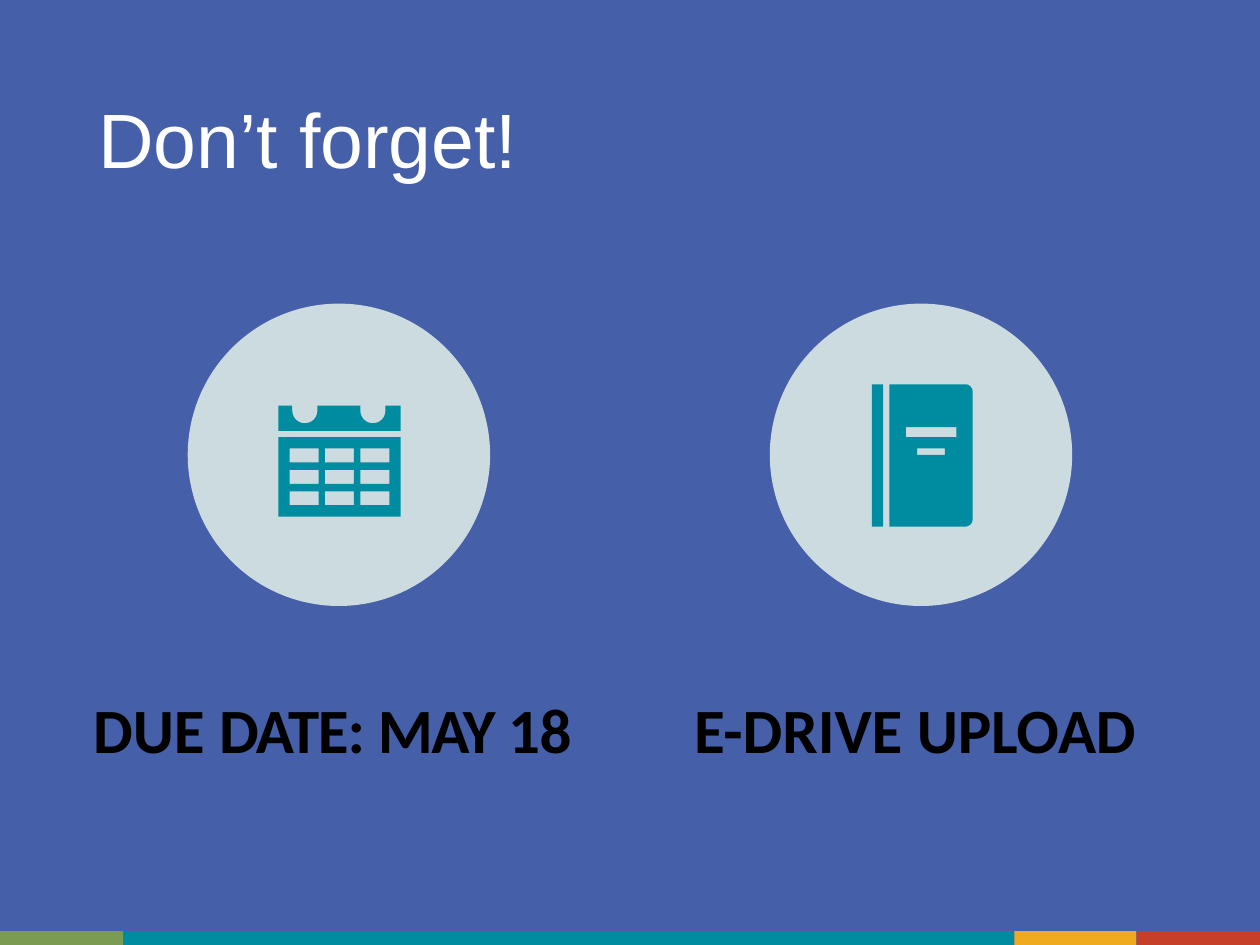
"""Build a reminder slide with a due date and an upload icon."""
from dataclasses import dataclass
from math import cos, pi, sin

from pptx import Presentation
from pptx.dml.color import RGBColor
from pptx.enum.shapes import MSO_SHAPE as Preset
from pptx.enum.text import MSO_ANCHOR as Anchor, MSO_AUTO_SIZE as AutoSize, PP_ALIGN as Align
from pptx.util import Inches, Pt


@dataclass(frozen=True)
class Theme:
    background: str = "455FA9"
    disc: str = "CBDBDF"
    teal: str = "008CA0"
    green: str = "7C9B52"
    amber: str = "EFAA1F"
    red: str = "C63F28"
    title_text: str = "FFFFFF"
    label_text: str = "000000"
    title_font: str = "Arial"
    label_font: str = "Calibri"
    title_size: int = 44
    label_size: int = 36


THEME = Theme()
SLIDE_SIZE = (10, 7.5)

TITLE = [("Don’t ", 0), ("forget!", -0.1)]
TITLE_BOX = (0.77, 0, 8.36, 1.79)
LABELS = [
    ((0.73, 5.46, 3.91, 0.63), [("DUE ", 0), ("DATE: ", -0.7), ("MAY ", -0.9), ("18", -0.3)]),
    ((5.5, 5.46, 3.63, 0.63), [("E-", -0.2), ("DRIVE ", 0), ("UPLOAD", -0.1)]),
]

FOOTER_TOP = 7.39
FOOTER_BANDS = [(0.98, THEME.green), (7.07, THEME.teal), (0.97, THEME.amber), (0.98, THEME.red)]

DISC_LEFTS = (1.49, 6.11)
DISC_TOP = 2.41
DISC_SIZE = 2.4

CALENDAR_PAGE = (2.21, 3.47, 0.97, 0.63)
CALENDAR_HEADER = (2.21, 3.22, 0.97, 0.2)
CALENDAR_COLUMNS = (2.3, 2.58, 2.86)
CALENDAR_ROWS = (3.56, 3.73, 3.9)
DAY_SIZE = (0.23, 0.11)
RING_CENTERS = (2.42, 2.96)
RING_RADIUS = 0.1
RING_DROP = 0.04

BOOK_SPINE = (6.92, 3.05, 0.09, 1.13)
BOOK_COVER = (7.06, 3.05, 0.66, 1.13)
BOOK_CORNER = 0.06
BOOK_LINES = [(7.19, 3.39, 0.4, 0.08), (7.28, 3.56, 0.22, 0.05)]


def paint(shape, color):
    shape.shadow.inherit = False
    shape.fill.solid()
    shape.fill.fore_color.rgb = RGBColor.from_string(color)
    shape.line.fill.background()


def add_preset(slide, preset, box, color):
    paint(slide.shapes.add_shape(preset, *map(Inches, box)), color)


def add_outline(slide, contours, color):
    builder = None
    for contour in contours:
        points = [(Inches(x), Inches(y)) for x, y in contour]
        if builder is None:
            builder = slide.shapes.build_freeform(*points[0])
        else:
            builder.move_to(*points[0])
        builder.add_line_segments(points[1:], close=True)
    paint(builder.convert_to_shape(), color)


def rectangle(left, top, width, height):
    right, bottom = left + width, top + height
    return [(left, top), (right, top), (right, bottom), (left, bottom)]


def arc(center_x, center_y, radius, start, end, steps=12):
    angles = [start + (end - start) * step / steps for step in range(steps + 1)]
    return [(center_x + radius * cos(a), center_y + radius * sin(a)) for a in angles]


def header_contour():
    left, top, width, height = CALENDAR_HEADER
    contour = [(left, top)]
    for center in RING_CENTERS:
        contour.append((center - RING_RADIUS, top))
        contour += arc(center, top + RING_DROP, RING_RADIUS, pi, 0)
        contour.append((center + RING_RADIUS, top))
    return contour + [(left + width, top), (left + width, top + height), (left, top + height)]


def cover_contour():
    left, top, width, height = BOOK_COVER
    center_x = left + width - BOOK_CORNER
    upper = arc(center_x, top + BOOK_CORNER, BOOK_CORNER, -pi / 2, 0)
    lower = arc(center_x, top + height - BOOK_CORNER, BOOK_CORNER, 0, pi / 2)
    return [(left, top), *upper, *lower, (left, top + height)]


def write_text(shape, runs, font_name, size, color, bold, top_inset):
    frame = shape.text_frame
    frame.word_wrap = True
    frame.auto_size = AutoSize.NONE
    frame.vertical_anchor = Anchor.TOP
    frame.margin_left, frame.margin_top = Inches(0.01), Inches(top_inset)
    frame.margin_right = frame.margin_bottom = 0
    paragraph = frame.paragraphs[0]
    paragraph.alignment = Align.LEFT
    for text, spacing in runs:
        run = paragraph.add_run()
        run.text = text
        font = run.font
        font.name, font.size, font.bold = font_name, Pt(size), bold
        font.color.rgb = RGBColor.from_string(color)
        run._r.get_or_add_rPr().set("spc", str(round(spacing * 100)))


def add_title(slide):
    title = slide.shapes.title
    title.left, title.top, title.width, title.height = map(Inches, TITLE_BOX)
    write_text(title, TITLE, THEME.title_font, THEME.title_size, THEME.title_text, False, 0.73)


def add_footer(slide):
    left = 0
    for width, color in FOOTER_BANDS:
        box = (left, FOOTER_TOP, width, SLIDE_SIZE[1] - FOOTER_TOP)
        add_preset(slide, Preset.RECTANGLE, box, color)
        left += width


def add_icons(slide):
    for left in DISC_LEFTS:
        add_preset(slide, Preset.OVAL, (left, DISC_TOP, DISC_SIZE, DISC_SIZE), THEME.disc)
    days = [rectangle(x, y, *DAY_SIZE) for y in CALENDAR_ROWS for x in CALENDAR_COLUMNS]
    add_outline(slide, [rectangle(*CALENDAR_PAGE), *days], THEME.teal)
    add_outline(slide, [header_contour()], THEME.teal)
    lines = [rectangle(*line) for line in BOOK_LINES]
    add_outline(slide, [rectangle(*BOOK_SPINE), cover_contour(), *lines], THEME.teal)


def add_labels(slide):
    for box, runs in LABELS:
        label = slide.shapes.add_textbox(*map(Inches, box))
        write_text(label, runs, THEME.label_font, THEME.label_size, THEME.label_text, True, 0.02)


def main():
    presentation = Presentation()
    presentation.slide_width, presentation.slide_height = map(Inches, SLIDE_SIZE)
    slide = presentation.slides.add_slide(presentation.slide_layouts[5])
    slide.background.fill.solid()
    slide.background.fill.fore_color.rgb = RGBColor.from_string(THEME.background)
    add_title(slide)
    add_footer(slide)
    add_icons(slide)
    add_labels(slide)
    presentation.save("out.pptx")


if __name__ == "__main__":
    main()
